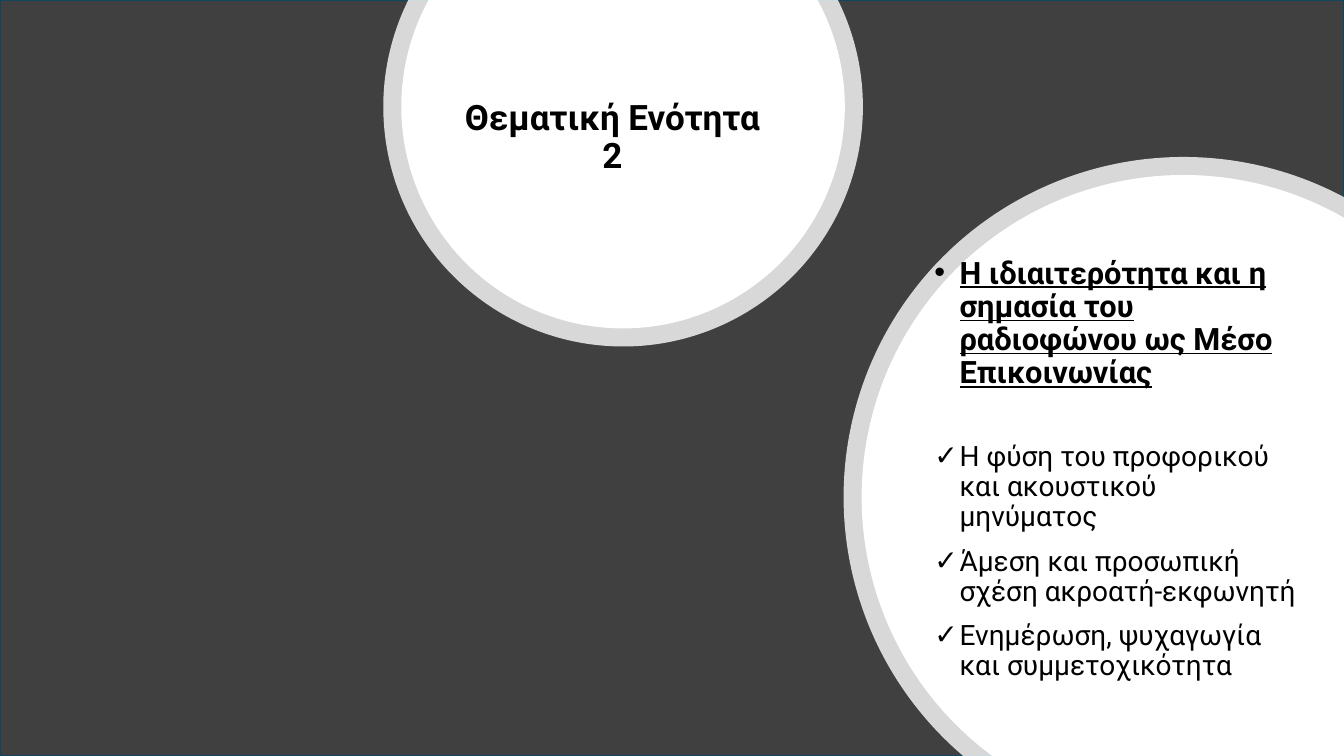
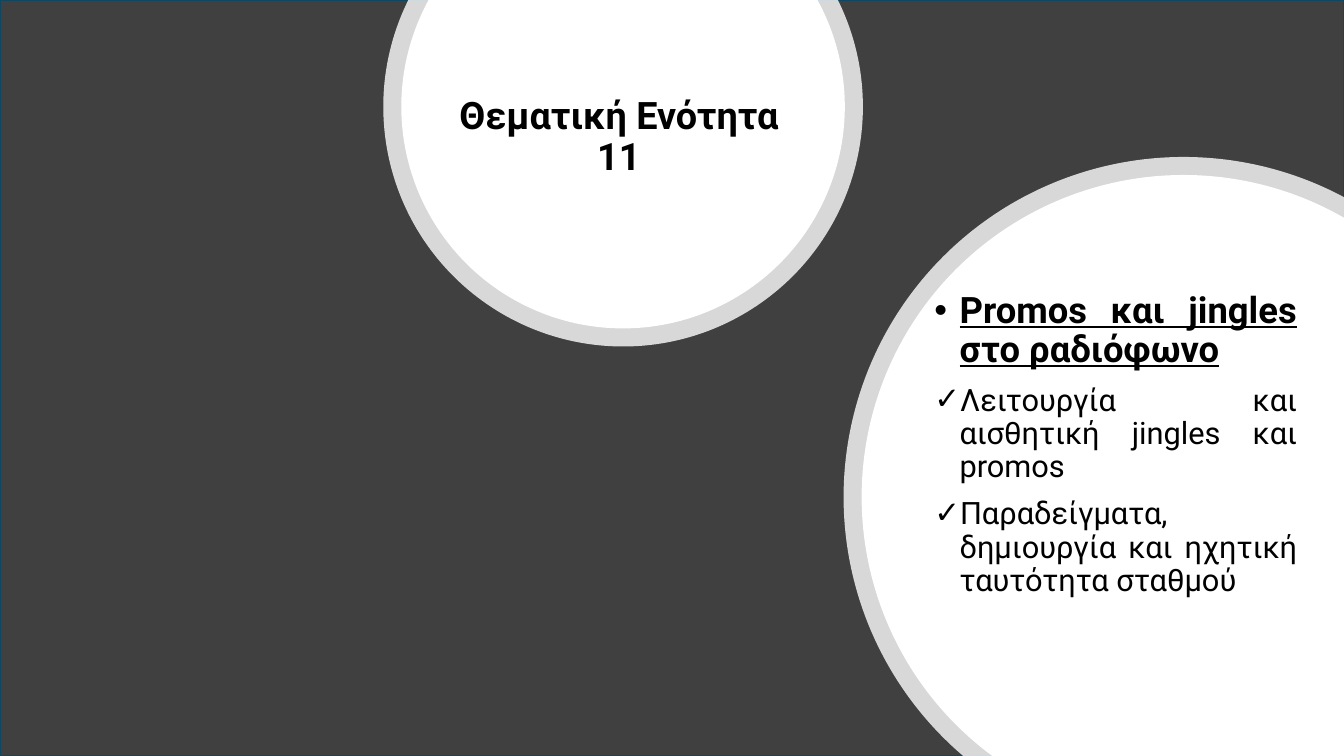
import math

import pptx
import pptx.dml.color
import pptx.enum.shapes
import pptx.enum.text
import pptx.oxml
import pptx.oxml.ns
import pptx.util

Pt = pptx.util.Pt
qn = pptx.oxml.ns.qn
NAMESPACE = pptx.oxml.ns.nsdecls("a")
ALIGN = pptx.enum.text.PP_ALIGN
COLOURS = {
    name: pptx.dml.color.RGBColor.from_string(value)
    for name, value in {
        "background": "404040", "border": "104760", "disc": "FFFFFF", "text": "000000",
    }.items()
}
WIDTH, HEIGHT = 960, 540
TEXT_LEFT, TEXT_WIDTH = 660.24, 273.6
INDENT = 18

# Discs: centre x, centre y, radius, opacity in percent
DISCS = [
    (445.1, 76.2, 171.3, 80),
    (845.5, 355, 242.9, 80),
    (445.1, 76.2, 158.4, 100),
    (845.5, 355, 230, 100),
]

# Slide contents: boxes are left, top, width, height
UNITS = [
    {
        "title": "Θεματική Ενότητα 2",
        "title_size": 25,
        "title_box": (316.08, 28.08, 242.64, 141.12),
        "body_box": (TEXT_LEFT, 153.36, TEXT_WIDTH, 364.32),
        "align": ALIGN.LEFT,
        "heading": "Η ιδιαιτερότητα και η σημασία του ραδιοφώνου ως Μέσο Επικοινωνίας",
        "heading_size": 22,
        "heading_gap": 37,
        "points": [
            "Η φύση του προφορικού και ακουστικού μηνύματος",
            "Άμεση και προσωπική σχέση ακροατή-εκφωνητή",
            "Ενημέρωση, ψυχαγωγία και συμμετοχικότητα",
        ],
        "point_size": 20,
    },
    {
        "title": "Θεματική Ενότητα 11",
        "title_size": 27,
        "title_box": (313.2, 28.08, 257.76, 141.12),
        "body_box": (TEXT_LEFT, 169.2, TEXT_WIDTH, 297.36),
        "align": ALIGN.JUSTIFY,
        "heading": "Promos και jingles στο ραδιόφωνο",
        "heading_size": 26,
        "heading_gap": 10,
        "points": [
            "Λειτουργία και αισθητική jingles και promos",
            "Παραδείγματα, δημιουργία και ηχητική ταυτότητα σταθμού",
        ],
        "point_size": 22,
    },
]


def place(placeholder, box):
    """Move a placeholder to a box and in front of the discs."""
    for name, value in zip(("left", "top", "width", "height"), box):
        setattr(placeholder, name, Pt(value))
    frame = placeholder.text_frame
    frame_format = {
        "word_wrap": True,
        "auto_size": pptx.enum.text.MSO_AUTO_SIZE.NONE,
        "vertical_anchor": pptx.enum.text.MSO_ANCHOR.MIDDLE,
    }
    for name, value in frame_format.items():
        setattr(frame, name, value)
    tree = placeholder.element.getparent()
    tree.append(placeholder.element)
    return frame


def write(paragraph, text, size, align, gap=0, bold=False, underline=False, bullet=None):
    """Fill one paragraph, with a hanging bullet if one is given."""
    if bullet:
        properties = paragraph._p.get_or_add_pPr()
        properties.set("marL", str(Pt(INDENT)))
        properties.set("indent", str(-Pt(INDENT)))
        for tag, attribute, value in (
            ("a:buFont", "typeface", "Arial"), ("a:buChar", "char", bullet),
        ):
            element = pptx.oxml.parse_xml(f"<{tag} {NAMESPACE}/>")
            element.set(attribute, value)
            properties.append(element)
    paragraph_format = {"alignment": align, "line_spacing": 0.9, "space_before": Pt(gap)}
    for name, value in paragraph_format.items():
        setattr(paragraph, name, value)
    run = paragraph.add_run()
    run.text = text
    run_format = {"name": "Roboto", "size": Pt(size), "bold": bold, "underline": underline}
    for name, value in run_format.items():
        setattr(run.font, name, value)
    run.font.color.rgb = COLOURS["text"]


presentation = pptx.Presentation()
presentation.slide_width, presentation.slide_height = Pt(WIDTH), Pt(HEIGHT)

for unit in UNITS:
    slide = presentation.slides.add_slide(presentation.slide_layouts[1])

    # Dark background with a thin border
    background = slide.shapes.add_shape(
        pptx.enum.shapes.MSO_SHAPE.RECTANGLE, 0, 0, Pt(WIDTH), Pt(HEIGHT))
    background.shadow.inherit = False
    background.fill.solid()
    background.fill.fore_color.rgb = COLOURS["background"]
    background.line.color.rgb = COLOURS["border"]
    background.line.width = Pt(1.5)

    # White discs with translucent rims, cut off at the slide edges
    for centre_x, centre_y, radius, opacity in DISCS:
        if centre_y < radius:
            cut = math.degrees(math.asin(centre_y / radius))
            angles, corners = [-cut, 0, 90, 180, 180 + cut], []
        else:
            bottom = math.degrees(math.asin((HEIGHT - centre_y) / radius))
            right = math.degrees(math.acos((WIDTH - centre_x) / radius))
            angles, corners = [180 - bottom, 180, 270, 360 - right], [(WIDTH, HEIGHT)]
        outline = [
            (centre_x + radius * math.cos(math.radians(angle)),
             centre_y + radius * math.sin(math.radians(angle)))
            for angle in angles
        ] + corners
        vertices = [(Pt(x), Pt(y)) for x, y in outline]
        builder = slide.shapes.build_freeform(*vertices[0])
        builder.add_line_segments(vertices[1:], close=True)
        disc = builder.convert_to_shape()

        # Bend the chords between the angles into arcs
        chords = disc.element.spPr.findall(".//" + qn("a:lnTo"))
        for chord, start, end in zip(chords, angles, angles[1:]):
            chord.getparent().replace(chord, pptx.oxml.parse_xml(
                f'<a:arcTo {NAMESPACE} wR="{Pt(radius)}" hR="{Pt(radius)}" '
                f'stAng="{round(start % 360 * 60000)}" '
                f'swAng="{round((end - start) * 60000)}"/>'))

        disc.shadow.inherit = False
        disc.fill.solid()
        disc.fill.fore_color.rgb = COLOURS["disc"]
        disc.line.fill.background()
        if opacity < 100:
            colour = disc.element.spPr.find(".//" + qn("a:srgbClr"))
            colour.append(pptx.oxml.parse_xml(
                f'<a:alpha {NAMESPACE} val="{opacity * 1000}"/>'))

    # Title in the upper disc
    frame = place(slide.shapes.title, unit["title_box"])
    write(frame.paragraphs[0], unit["title"], unit["title_size"], ALIGN.CENTER, bold=True)

    # Heading and checked points in the lower disc
    frame = place(slide.placeholders[1], unit["body_box"])
    write(frame.paragraphs[0], unit["heading"], unit["heading_size"], unit["align"],
          bold=True, underline=True, bullet="•")
    for index, point in enumerate(unit["points"]):
        gap = 10 if index else unit["heading_gap"]
        write(frame.add_paragraph(), point, unit["point_size"], unit["align"],
              gap=gap, bullet="✓")

presentation.save("out.pptx")
